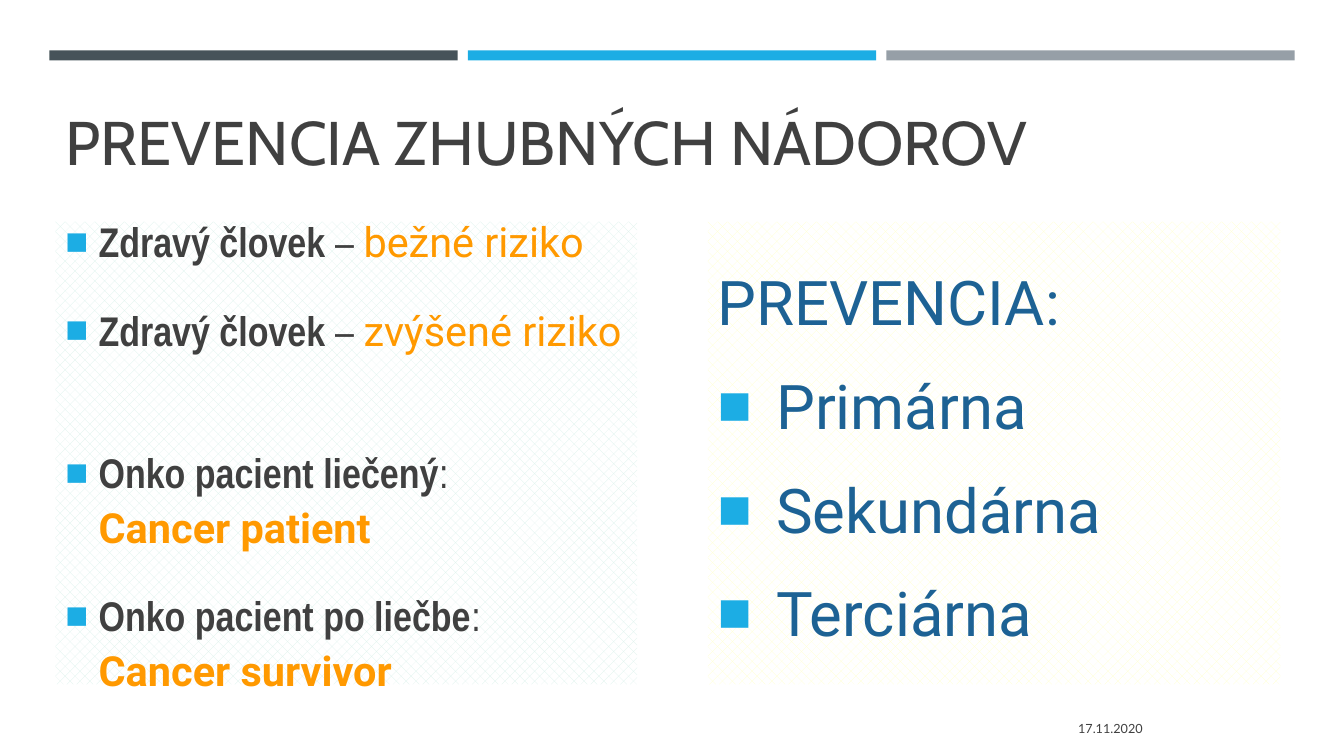
from lxml.etree import SubElement
from pptx import Presentation
from pptx.dml.color import RGBColor
from pptx.enum.dml import MSO_PATTERN
from pptx.enum.shapes import MSO_SHAPE
from pptx.enum.text import MSO_ANCHOR, PP_ALIGN
from pptx.oxml.ns import qn
from pptx.util import Inches, Pt

COLORS = {
    "white": "FFFFFF", "slate": "465359", "sky": "1CADE4", "gray": "969FA7",
    "text": "404040", "orange": "FF9900", "blue": "1D6294",
    "mint": "D9F1EA", "cream": "FFFFCC",
}


def rgb(name):
    return RGBColor.from_string(COLORS[name])


class SlideBuilder:
    def __init__(self, slide):
        self.slide = slide

    def rectangle(self, left, top, width, height):
        shape = self.slide.shapes.add_shape(
            MSO_SHAPE.RECTANGLE, Inches(left), Inches(top), Inches(width), Inches(height))
        shape.shadow.inherit = False
        shape.line.fill.background()
        return shape

    def bar(self, left, top, width, height, color):
        shape = self.rectangle(left, top, width, height)
        shape.fill.solid()
        shape.fill.fore_color.rgb = rgb(color)

    def panel(self, left, top, width, height, color):
        shape = self.rectangle(left, top, width, height)
        shape.fill.patterned()
        shape.fill.pattern = MSO_PATTERN.PERCENT_30
        shape.fill.fore_color.rgb = rgb(color)
        shape.fill.back_color.rgb = rgb("white")
        frame = shape.text_frame
        frame.word_wrap = True
        frame.vertical_anchor = MSO_ANCHOR.MIDDLE
        return frame

    def label(self, left, top, width, height, text, size, font, anchor, align):
        box = self.slide.shapes.add_textbox(
            Inches(left), Inches(top), Inches(width), Inches(height))
        frame = box.text_frame
        frame.word_wrap = True
        frame.vertical_anchor = anchor
        frame.text = text
        page_text = frame.paragraphs[0]
        page_text.alignment = align
        self.style(page_text.runs[0], size, font, "text")

    def style(self, span, size, font, color, bold=False):
        span.font.size = Pt(size)
        span.font.name = font
        span.font.bold = bold
        span.font.color.rgb = rgb(color)

    def bullet(self, para, indent):
        props = para._p.get_or_add_pPr()
        props.set("marL", str(Inches(indent)))
        props.set("indent", str(-Inches(indent)))
        color = SubElement(props, qn("a:buClr"))
        SubElement(color, qn("a:srgbClr"), val=COLORS["sky"])
        SubElement(props, qn("a:buSzPct"), val="92000")
        SubElement(props, qn("a:buFont"), typeface="Arial")
        SubElement(props, qn("a:buChar"), char="■")

    def paragraph(self, frame, index, before, after, indent=0):
        para = frame.add_paragraph() if index else frame.paragraphs[0]
        para.alignment = PP_ALIGN.LEFT
        if indent:
            self.bullet(para, indent)
        para.line_spacing = 1.1
        para.space_before = Pt(before if index else 0)
        para.space_after = Pt(after)
        return para

    def span(self, para, text, *style):
        span = para.add_run()
        span.text = text
        self.style(span, *style)


def main():
    deck = Presentation()
    deck.slide_width, deck.slide_height = Inches(13.33), Inches(7.5)
    page = SlideBuilder(deck.slides.add_slide(deck.slide_layouts[6]))

    # Top bars
    for column, color in enumerate(("slate", "sky", "gray")):
        page.bar(0.49 + 4.15 * column, 0.5, 4.05, 0.1, color)

    # Title
    page.label(0.55, 0.73, 12.06, 1.08, "PREVENCIA ZHUBNÝCH NÁDOROV", 44, "Cabin",
               MSO_ANCHOR.BOTTOM, PP_ALIGN.LEFT)

    # Patient groups: name, separator, highlight, on a new line, space before
    groups = [
        ("Zdravý človek", " – ", "bežné riziko", False, 0),
        ("Zdravý človek", " – ", "zvýšené riziko", False, 12),
        ("Onko pacient liečený", ":", "Cancer patient", True, 51),
        ("Onko pacient po liečbe", ":", "Cancer survivor", True, 12),
    ]
    frame = page.panel(0.55, 2.2, 5.77, 4.59, "mint")
    for index, (name, separator, highlight, new_line, before) in enumerate(groups):
        para = page.paragraph(frame, index, before, 12, 0.33)
        page.span(para, name, 29.6, "Arial Narrow", "text", True)
        page.span(para, separator, 29.6, "Arial Narrow", "text")
        if new_line:
            para.add_line_break()
        page.span(para, highlight, 29.6, "Roboto", "orange", new_line)

    # Prevention levels
    frame = page.panel(7.02, 2.2, 5.68, 4.59, "cream")
    for index, text in enumerate(("PREVENCIA:", "Primárna", "Sekundárna", "Terciárna")):
        para = page.paragraph(frame, index, 10, 6, 0.58 if index else 0)
        page.span(para, text, 44, "Roboto", "blue")

    # Date
    page.label(8.32, 7.03, 3.11, 0.4, "17.11.2020", 9, "Lato",
               MSO_ANCHOR.MIDDLE, PP_ALIGN.RIGHT)

    deck.save("out.pptx")


if __name__ == "__main__":
    main()
